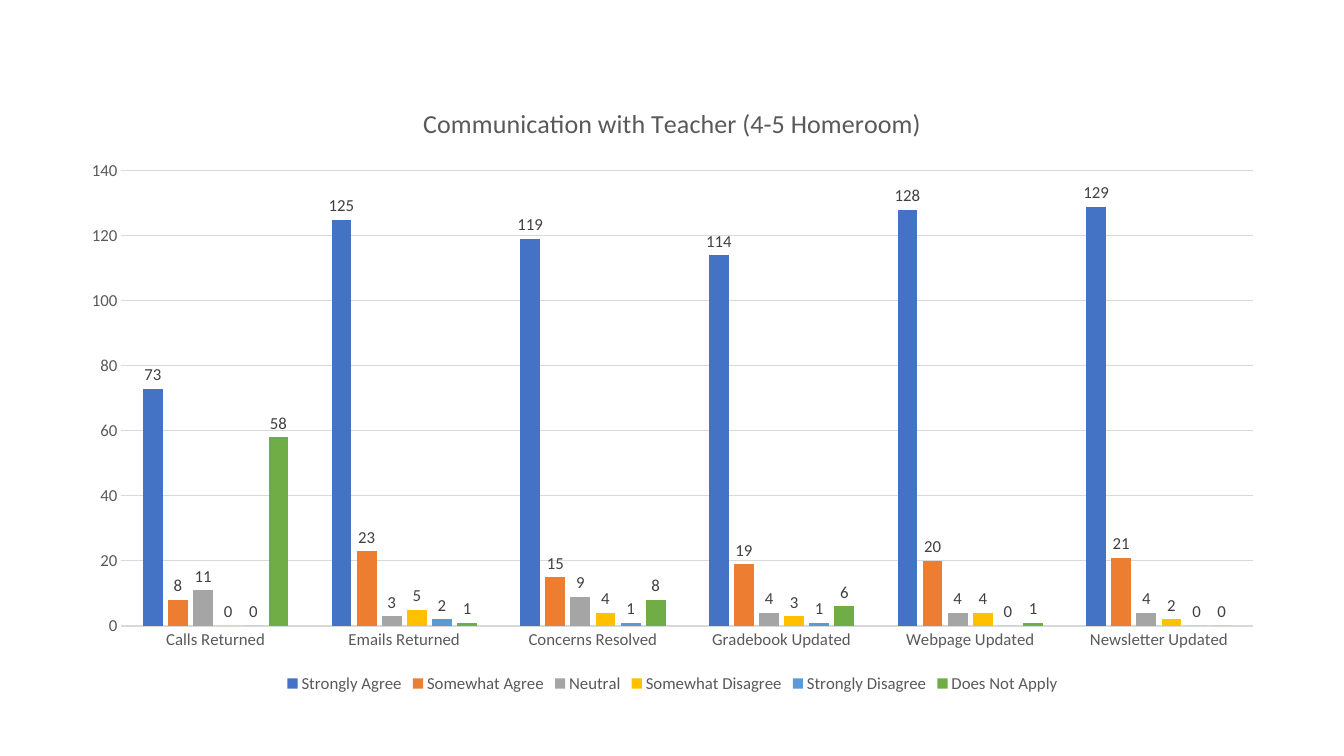
from dataclasses import dataclass

from pptx import Presentation
from pptx.chart.data import CategoryChartData
from pptx.dml.color import RGBColor
from pptx.enum.chart import XL_CHART_TYPE as ChartType
from pptx.enum.chart import XL_LABEL_POSITION as LabelPosition
from pptx.enum.chart import XL_LEGEND_POSITION as LegendPosition
from pptx.enum.chart import XL_TICK_MARK as TickMark
from pptx.util import Inches, Pt


@dataclass(frozen=True)
class Theme:
    font: str = "Calibri"
    text: str = "595959"
    label: str = "404040"
    rule: str = "D9D9D9"
    background: str = "FFFFFF"
    title_size: float = 18.6
    text_size: float = 12
    rule_width: float = 0.75
    series: tuple = ("4472C4", "ED7D31", "A5A5A5", "FFC000", "5B9BD5", "70AD47")


TITLE = "Communication with Teacher (4-5 Homeroom)"
QUESTIONS = (
    "Calls Returned",
    "Emails Returned",
    "Concerns Resolved",
    "Gradebook Updated",
    "Webpage Updated",
    "Newsletter Updated",
)
ANSWERS = {
    "Strongly Agree": (73, 125, 119, 114, 128, 129),
    "Somewhat Agree": (8, 23, 15, 19, 20, 21),
    "Neutral": (11, 3, 9, 4, 4, 4),
    "Somewhat Disagree": (0, 5, 4, 3, 4, 2),
    "Strongly Disagree": (0, 2, 1, 1, 0, 0),
    "Does Not Apply": (58, 1, 8, 6, 1, 0),
}


class SlideBuilder:
    def __init__(self, slide, theme):
        self.slide = slide
        self.theme = theme
        fill = slide.background.fill
        fill.solid()
        fill.fore_color.rgb = RGBColor.from_string(theme.background)

    def style_font(self, font, color, size):
        font.name = self.theme.font
        font.size = Pt(size)
        font.bold = False
        font.color.rgb = RGBColor.from_string(color)

    def style_rule(self, line):
        line.color.rgb = RGBColor.from_string(self.theme.rule)
        line.width = Pt(self.theme.rule_width)

    def style_axis(self, axis):
        axis.major_tick_mark = TickMark.NONE
        axis.minor_tick_mark = TickMark.NONE
        self.style_font(axis.tick_labels.font, self.theme.text, self.theme.text_size)

    def style_series(self, series, color):
        series.invert_if_negative = False
        series.format.fill.solid()
        series.format.fill.fore_color.rgb = RGBColor.from_string(color)
        labels = series.data_labels
        labels.show_value = True
        labels.position = LabelPosition.OUTSIDE_END
        self.style_font(labels.font, self.theme.label, self.theme.text_size)

    def add_column_chart(self, title, categories, answers, left, top, width, height):
        theme = self.theme
        data = CategoryChartData()
        data.categories = categories
        for name, values in answers.items():
            data.add_series(name, values)
        chart = self.slide.shapes.add_chart(
            ChartType.COLUMN_CLUSTERED,
            Inches(left), Inches(top), Inches(width), Inches(height), data,
        ).chart
        self.style_font(chart.font, theme.text, theme.text_size)

        chart.has_title = True
        chart.chart_title.include_in_layout = False
        paragraph = chart.chart_title.text_frame.paragraphs[0]
        paragraph.text = title
        self.style_font(paragraph.font, theme.text, theme.title_size)

        chart.has_legend = True
        chart.legend.position = LegendPosition.BOTTOM
        chart.legend.include_in_layout = False
        self.style_font(chart.legend.font, theme.text, theme.text_size)

        self.style_axis(chart.category_axis)
        self.style_rule(chart.category_axis.format.line)
        self.style_axis(chart.value_axis)
        chart.value_axis.format.line.fill.background()
        self.style_rule(chart.value_axis.major_gridlines.format.line)

        plot = chart.plots[0]
        plot.vary_by_categories = False
        plot.gap_width = 219
        plot.overlap = -27
        for series, color in zip(plot.series, theme.series):
            self.style_series(series, color)


def main():
    presentation = Presentation()
    presentation.slide_width = Inches(13.33)
    presentation.slide_height = Inches(7.5)
    slide = presentation.slides.add_slide(presentation.slide_layouts[6])
    builder = SlideBuilder(slide, Theme())
    builder.add_column_chart(TITLE, QUESTIONS, ANSWERS, 0.67, 0.82, 12, 6.1)
    presentation.save("out.pptx")


if __name__ == "__main__":
    main()
